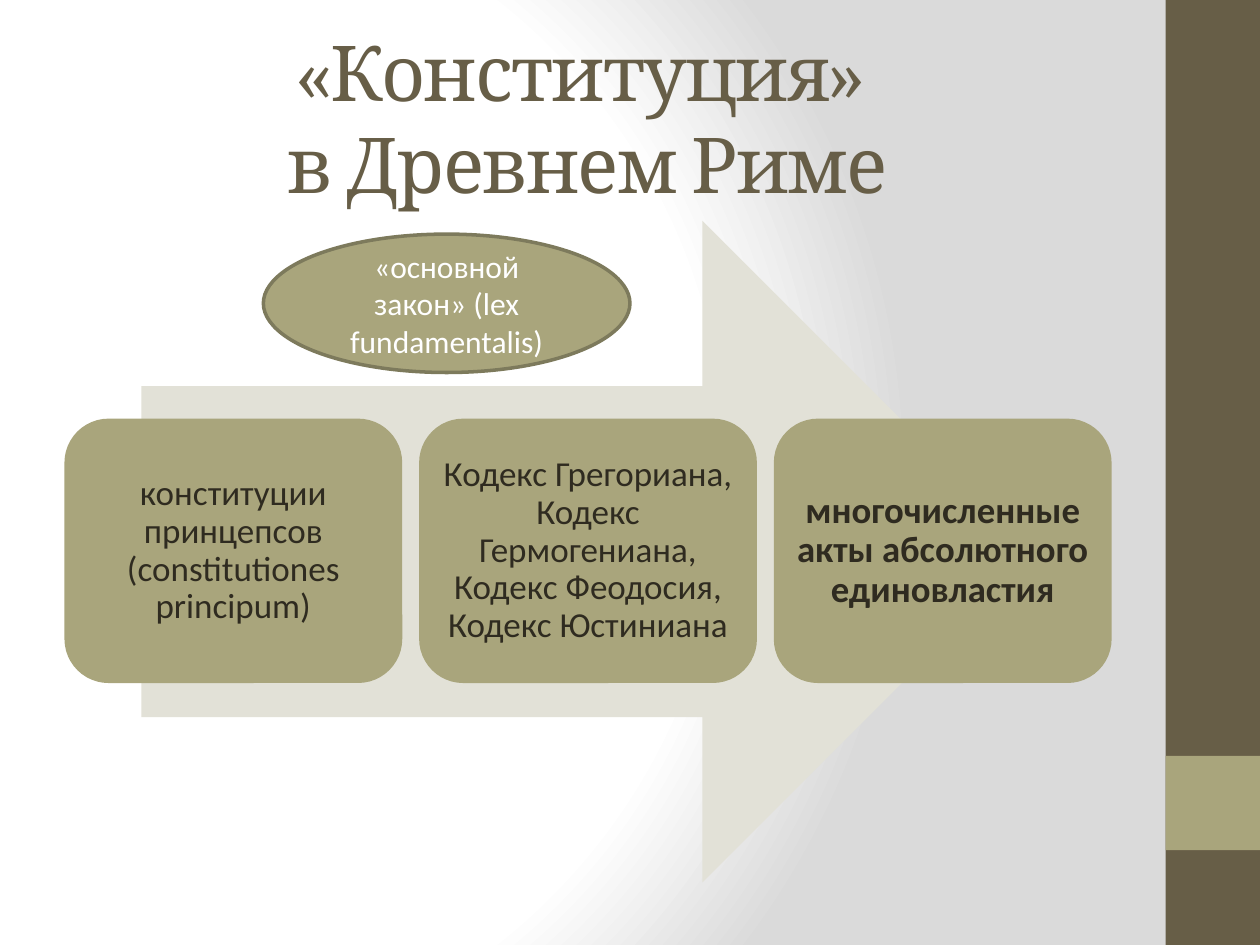
from lxml import etree
from pptx import Presentation
from pptx.dml.color import RGBColor
from pptx.enum.shapes import MSO_SHAPE as Shape
from pptx.enum.text import MSO_ANCHOR as Anchor, PP_ALIGN as Align
from pptx.oxml.ns import qn
from pptx.util import Cm, Pt

BROWN = RGBColor(0x67, 0x5E, 0x47)
OLIVE = RGBColor(0xA9, 0xA5, 0x7C)
OLIVE_EDGE = RGBColor(0x7D, 0x7A, 0x5C)
PALE = RGBColor(0xE2, 0xE1, 0xD7)
INK = RGBColor(0x2F, 0x2B, 0x20)
WHITE = RGBColor(0xFF, 0xFF, 0xFF)
GREY = RGBColor(0xDA, 0xDA, 0xDA)

TITLE = "«Конституция» \vв Древнем Риме"
BASIC_LAW = "«основной закон» (lex fundamentalis)"
STAGES = [
    ("конституции принцепсов (constitutiones principum)", 20, False),
    ("Кодекс Грегориана, Кодекс Гермогениана, Кодекс Феодосия, Кодекс Юстиниана", 20, False),
    ("многочисленные акты абсолютного единовластия", 21, True),
]
BACKGROUND_STOPS = [(0, WHITE), (75, WHITE), (100, GREY)]
BACKGROUND_FOCUS = {"l": 20, "t": 50, "r": 100, "b": 50}

SLIDE_WIDTH, SLIDE_HEIGHT = 25.4, 19.05
BAR_WIDTH = 1.9
ACCENT_TOP = 15.24
STAGE_LEFT, STAGE_TOP = 1.3, 8.44
STAGE_WIDTH, STAGE_HEIGHT, STAGE_PITCH = 6.81, 5.33, 7.15


def paint_background(page):
    fill = page.background.fill
    fill.gradient()
    gradient = page.background._cSld.find(".//" + qn("a:gradFill"))
    for child in list(gradient):
        gradient.remove(child)
    stops = etree.SubElement(gradient, qn("a:gsLst"))
    for position, color in BACKGROUND_STOPS:
        stop = etree.SubElement(stops, qn("a:gs"), pos=str(position * 1000))
        etree.SubElement(stop, qn("a:srgbClr"), val=str(color))
    circle = etree.SubElement(gradient, qn("a:path"))
    circle.set("path", "circle")
    focus = {side: str(share * 1000) for side, share in BACKGROUND_FOCUS.items()}
    etree.SubElement(circle, qn("a:fillToRect"), focus)


def add_figure(page, kind, left, top, width, height, color):
    figure = page.shapes.add_shape(kind, Cm(left), Cm(top), Cm(width), Cm(height))
    figure.shadow.inherit = False
    figure.fill.solid()
    figure.fill.fore_color.rgb = color
    figure.line.fill.background()
    return figure


def write_text(figure, text, color, inset=None, spacing=1.0, **font_format):
    frame = figure.text_frame
    frame.word_wrap = True
    frame.vertical_anchor = Anchor.MIDDLE
    if inset is not None:
        for side in ("left", "top", "right", "bottom"):
            setattr(frame, f"margin_{side}", Cm(inset))
    para = frame.paragraphs[0]
    para.text = text
    para.alignment = Align.CENTER
    para.line_spacing = spacing
    for span in para.runs:
        span.font.color.rgb = color
        for name, value in font_format.items():
            setattr(span.font, name, value)
    return para


def main():
    deck = Presentation()
    deck.slide_width, deck.slide_height = Cm(SLIDE_WIDTH), Cm(SLIDE_HEIGHT)
    page = deck.slides.add_slide(deck.slide_layouts[5])
    paint_background(page)

    bar_left = SLIDE_WIDTH - BAR_WIDTH
    add_figure(page, Shape.RECTANGLE, bar_left, 0, BAR_WIDTH, SLIDE_HEIGHT, BROWN)
    add_figure(page, Shape.RECTANGLE, bar_left, ACCENT_TOP, BAR_WIDTH, BAR_WIDTH, OLIVE)

    title = page.shapes.title
    title.left, title.top, title.width, title.height = Cm(1.27), Cm(0.76), Cm(21.16), Cm(3.18)
    heading = write_text(title, TITLE, BROWN, name="Cambria", size=Pt(44))
    for span in heading.runs:
        span.font._element.set("spc", "-100")

    add_figure(page, Shape.RIGHT_ARROW, 2.85, 4.45, 17.98, 13.34, PALE)
    for index, (text, size, bold) in enumerate(STAGES):
        stage = add_figure(page, Shape.ROUNDED_RECTANGLE, STAGE_LEFT + index * STAGE_PITCH,
                           STAGE_TOP, STAGE_WIDTH, STAGE_HEIGHT, OLIVE)
        write_text(stage, text, INK, inset=0.2, spacing=0.9,
                   name="Calibri", size=Pt(size), bold=bold)

    oval = add_figure(page, Shape.OVAL, 5.31, 4.72, 7.39, 2.79, OLIVE)
    oval.line.color.rgb = OLIVE_EDGE
    oval.line.width = Pt(2)
    write_text(oval, BASIC_LAW, WHITE, name="Calibri", size=Pt(18))

    deck.save("out.pptx")


if __name__ == "__main__":
    main()
